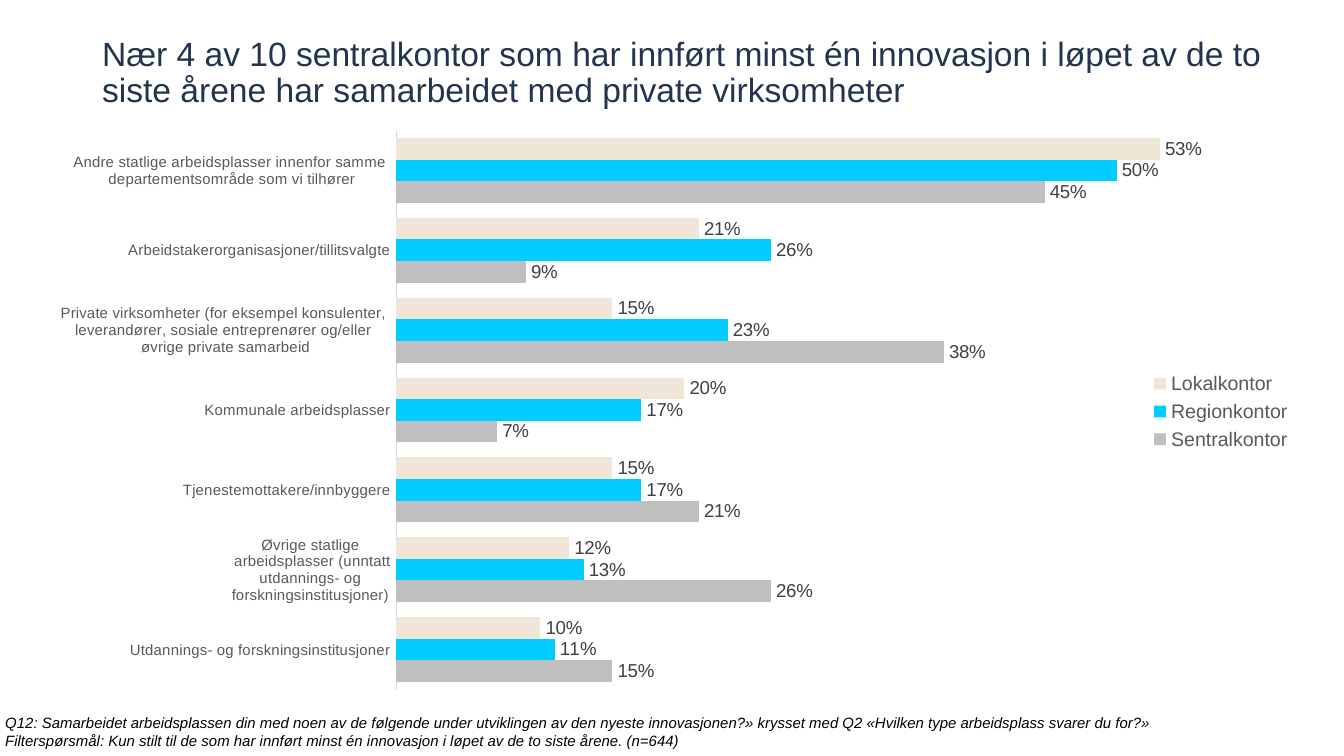
"""Build a slide on who central, regional and local offices innovated with."""
from dataclasses import dataclass

from lxml import etree
from pptx import Presentation
from pptx.chart.data import CategoryChartData
from pptx.dml.color import RGBColor
from pptx.enum.chart import XL_CHART_TYPE, XL_LABEL_POSITION, XL_LEGEND_POSITION, XL_TICK_MARK
from pptx.enum.text import MSO_ANCHOR
from pptx.oxml.ns import qn
from pptx.util import Cm, Pt

CLUSTERED_BARS = XL_CHART_TYPE.BAR_CLUSTERED
OUTSIDE_END = XL_LABEL_POSITION.OUTSIDE_END
RIGHT = XL_LEGEND_POSITION.RIGHT
NO_TICK = XL_TICK_MARK.NONE
BOTTOM = MSO_ANCHOR.BOTTOM
TOP = MSO_ANCHOR.TOP


@dataclass(frozen=True)
class Theme:
    face: str = "Arial"
    navy: str = "23344F"
    black: str = "000000"
    label: str = "404040"
    muted: str = "595959"
    axis: str = "D9D9D9"
    central: str = "BFBFBF"
    regional: str = "00CCFF"
    local: str = "F0E6D8"
    title_size: float = 18
    legend_size: float = 10.5
    value_size: float = 10
    small_size: float = 8


theme = Theme()


def style_font(font, size, color, italic=False):
    font.name = theme.face
    font.size = Pt(size)
    font.italic = italic
    font.color.rgb = RGBColor.from_string(color)


def add_text(slide, box, lines, anchor, spacing, size, color, italic=False):
    frame = slide.shapes.add_textbox(*(Cm(length) for length in box)).text_frame
    frame.word_wrap = True
    frame.vertical_anchor = anchor
    frame.margin_left = frame.margin_right = frame.margin_top = frame.margin_bottom = 0
    for index, line in enumerate(lines):
        paragraph = frame.add_paragraph() if index else frame.paragraphs[0]
        paragraph.line_spacing = spacing
        run = paragraph.add_run()
        run.text = line
        style_font(run.font, size, color, italic)


presentation = Presentation()
presentation.slide_width = Cm(25.4)
presentation.slide_height = Cm(14.29)
slide = presentation.slides.add_slide(presentation.slide_layouts[6])

headline = (
    "Nær 4 av 10 sentralkontor som har innført minst én innovasjon i løpet av de to "
    "siste årene har samarbeidet med private virksomheter"
)
add_text(slide, (1.93, 1.24, 23.24, 0.84), [headline], BOTTOM, 0.9, theme.title_size, theme.navy)

partners = [
    "Utdannings- og forskningsinstitusjoner",
    "Øvrige statlige\n arbeidsplasser (unntatt\n utdannings- og \nforskningsinstitusjoner)",
    "Tjenestemottakere/innbyggere",
    "Kommunale arbeidsplasser",
    "Private virksomheter (for eksempel konsulenter, \n"
    "leverandører, sosiale entreprenører og/eller \nøvrige private samarbeid",
    "Arbeidstakerorganisasjoner/tillitsvalgte",
    "Andre statlige arbeidsplasser innenfor samme \ndepartementsområde som vi tilhører",
]
offices = [
    ("Sentralkontor", theme.central, (0.15, 0.26, 0.21, 0.07, 0.38, 0.09, 0.45)),
    ("Regionkontor", theme.regional, (0.11, 0.13, 0.17, 0.17, 0.23, 0.26, 0.5)),
    ("Lokalkontor", theme.local, (0.1, 0.12, 0.15, 0.2, 0.15, 0.21, 0.53)),
]
shares = CategoryChartData(number_format="0%")
shares.categories = partners
for office, _, values in offices:
    shares.add_series(office, values)

chart = slide.shapes.add_chart(
    CLUSTERED_BARS, Cm(0.64), Cm(2.08), Cm(24.03), Cm(11.4), shares
).chart
chart.has_title = False
style_font(chart.font, theme.value_size, theme.black)

bars = chart.plots[0]
bars.gap_width = 70
bars.overlap = 0
bars.vary_by_categories = False
for series, (_, color, _) in zip(bars.series, offices):
    series.format.fill.solid()
    series.format.fill.fore_color.rgb = RGBColor.from_string(color)
    labels = series.data_labels
    labels.show_value = True
    labels.position = OUTSIDE_END
    labels.number_format = "0%"
    labels.number_format_is_linked = False
    style_font(labels.font, theme.value_size, theme.label)

partner_axis = chart.category_axis
partner_axis.major_tick_mark = NO_TICK
partner_axis.minor_tick_mark = NO_TICK
partner_axis.format.line.color.rgb = RGBColor.from_string(theme.axis)
partner_axis.format.line.width = Pt(0.75)
style_font(partner_axis.tick_labels.font, theme.small_size, theme.muted)

share_axis = chart.value_axis
share_axis.minimum_scale = 0
share_axis.maximum_scale = 0.6
share_axis.has_major_gridlines = False
share_axis.visible = False

chart.has_legend = True
chart.legend.position = RIGHT
chart.legend.include_in_layout = False
style_font(chart.legend.font, theme.legend_size, theme.muted)

plot_area = chart.element.find(".//" + qn("c:plotArea"))
for automatic in plot_area.findall(qn("c:layout")):
    plot_area.remove(automatic)
layout = etree.Element(qn("c:layout"))
manual = etree.SubElement(layout, qn("c:manualLayout"))
for tag, setting in (
    ("layoutTarget", "inner"), ("xMode", "edge"), ("yMode", "edge"),
    ("x", "0.285"), ("y", "0.034"), ("w", "0.68"), ("h", "0.927"),
):
    etree.SubElement(manual, qn("c:" + tag)).set("val", setting)
plot_area.insert(0, layout)

source_notes = [
    "Q12: Samarbeidet arbeidsplassen din med noen av de følgende under utviklingen av den "
    "nyeste innovasjonen?» krysset med Q2 «Hvilken type arbeidsplass svarer du for?»",
    "Filterspørsmål: Kun stilt til de som har innført minst én innovasjon i løpet av "
    "de to siste årene. (n=644)",
]
add_text(slide, (0.1, 13.49, 24.59, 0.69), source_notes, TOP, 1.0,
         theme.small_size, theme.black, italic=True)

presentation.save("out.pptx")
